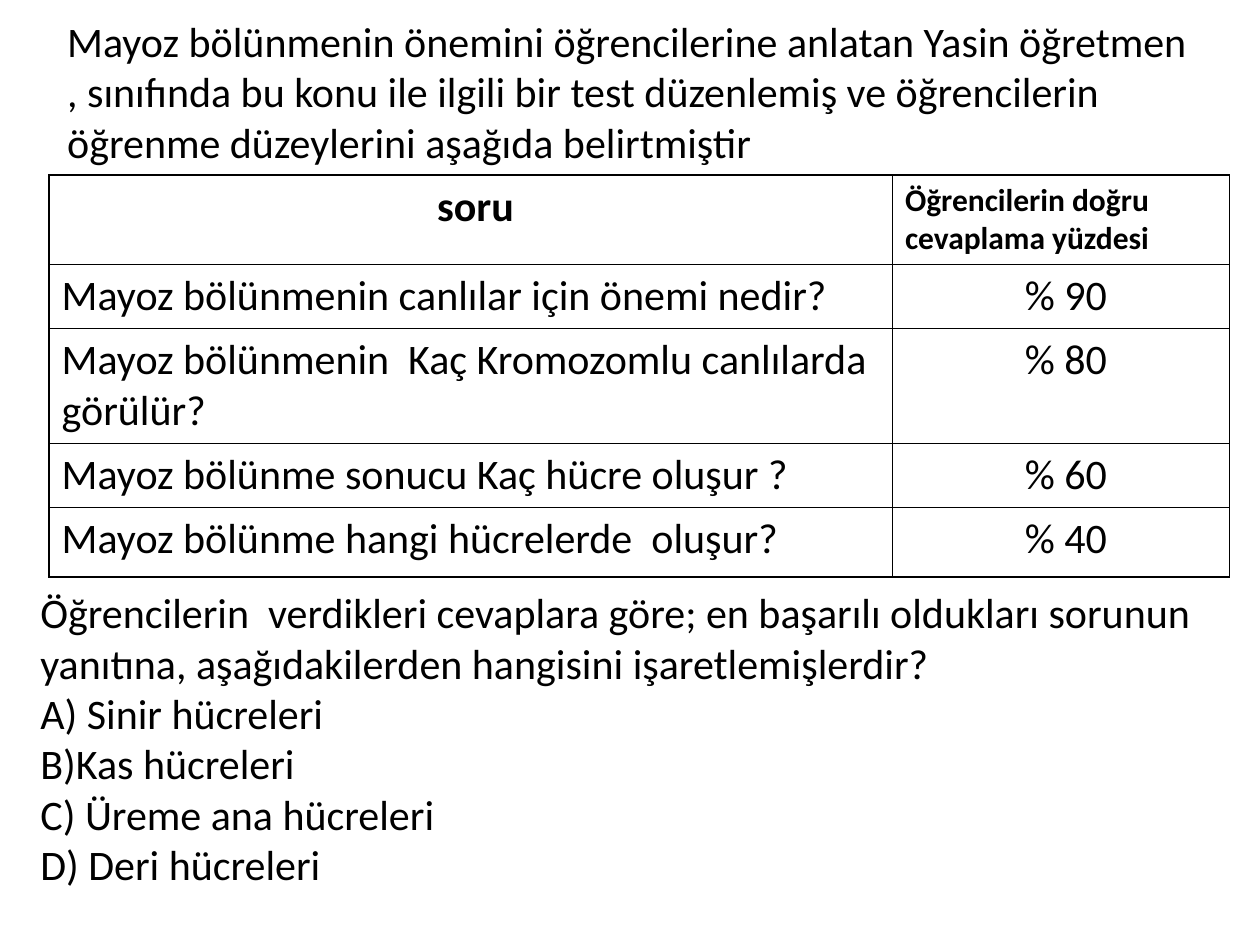
from lxml.etree import SubElement
from pptx import Presentation
from pptx.dml.color import RGBColor
from pptx.enum.text import MSO_ANCHOR, MSO_AUTO_SIZE, PP_ALIGN
from pptx.oxml.ns import qn
from pptx.util import Cm, Pt

BLACK = RGBColor(0x00, 0x00, 0x00)
WHITE = RGBColor(0xFF, 0xFF, 0xFF)

INTRO = (
    "Mayoz bölünmenin önemini öğrencilerine anlatan Yasin öğretmen , sınıfında bu konu "
    "ile ilgili bir test düzenlemiş ve öğrencilerin öğrenme düzeylerini aşağıda belirtmiştir"
)
RESULTS = [
    (" soru", "Öğrencilerin doğru cevaplama yüzdesi"),
    ("Mayoz bölünmenin canlılar için önemi nedir?", " % 90"),
    ("Mayoz bölünmenin  Kaç Kromozomlu canlılarda görülür?", " % 80"),
    ("Mayoz bölünme sonucu Kaç hücre oluşur ?", " % 60"),
    ("Mayoz bölünme hangi hücrelerde  oluşur?", " % 40"),
]
QUESTION = [
    "Öğrencilerin  verdikleri cevaplara göre; en başarılı oldukları sorunun yanıtına, "
    "aşağıdakilerden hangisini işaretlemişlerdir?",
    "A) Sinir hücreleri\vB)Kas hücreleri",
    "C) Üreme ana hücreleri",
    "D) Deri hücreleri",
]


class QuizSlide:
    font = "Calibri"
    size = 24
    header_size = 18

    def __init__(self, slide):
        self.slide = slide

    def format(self, paragraph, size, align=PP_ALIGN.LEFT, bold=False):
        paragraph.alignment = align
        for run in paragraph.runs:
            run.font.name = self.font
            run.font.size = Pt(size)
            run.font.bold = bold
            run.font.color.rgb = BLACK

    def passage(self, placeholder, lines, left, top, width, height):
        placeholder.left, placeholder.top = Cm(left), Cm(top)
        placeholder.width, placeholder.height = Cm(width), Cm(height)
        frame = placeholder.text_frame
        frame.text = "\n".join(lines) if len(lines) == 1 else lines[0]
        for line in lines[1:]:
            frame.add_paragraph().text = line
        frame.word_wrap = True
        frame.auto_size = MSO_AUTO_SIZE.NONE
        frame.vertical_anchor = MSO_ANCHOR.TOP
        for paragraph in frame.paragraphs:
            self.format(paragraph, self.size)
            paragraph.space_before = Pt(0)
            properties = paragraph._p.get_or_add_pPr()
            properties.set("marL", "0")
            properties.set("indent", "0")
            SubElement(properties, qn("a:buNone"))

    def border(self, cell):
        properties = cell._tc.get_or_add_tcPr()
        for side in ("lnL", "lnR", "lnT", "lnB"):
            line = SubElement(properties, qn(f"a:{side}"), w=str(Pt(1)))
            fill = SubElement(line, qn("a:solidFill"))
            SubElement(fill, qn("a:srgbClr"), val=str(BLACK))

    def table(self, rows, left, top, widths, heights):
        table = self.slide.shapes.add_table(
            len(rows), len(widths), Cm(left), Cm(top), Cm(sum(widths)), Cm(sum(heights))
        ).table
        for column, width in zip(table.columns, widths):
            column.width = Cm(width)
        for row, height in zip(table.rows, heights):
            row.height = Cm(height)
        for r, texts in enumerate(rows):
            for c, text in enumerate(texts):
                cell = table.cell(r, c)
                cell.text_frame.text = text
                header = r == 0
                centred = header != (c == 1)
                self.format(
                    cell.text_frame.paragraphs[0],
                    self.header_size if header and c == 1 else self.size,
                    PP_ALIGN.CENTER if centred else PP_ALIGN.LEFT,
                    header,
                )
                self.border(cell)
                cell.fill.solid()
                cell.fill.fore_color.rgb = WHITE


def main():
    presentation = Presentation()
    presentation.slide_width, presentation.slide_height = Cm(25.4), Cm(19.05)
    slide = presentation.slides.add_slide(presentation.slide_layouts[1])
    quiz = QuizSlide(slide)
    quiz.passage(slide.shapes.title, [INTRO], 1.1, 0.18, 23.2, 3.33)
    quiz.passage(slide.placeholders[1], QUESTION, 0.56, 11.7, 24.2, 6.4)
    quiz.table(RESULTS, 0.99, 3.53, [17, 6.8], [1.78, 1.27, 2.28, 1.27, 1.4])
    presentation.save("out.pptx")


if __name__ == "__main__":
    main()
